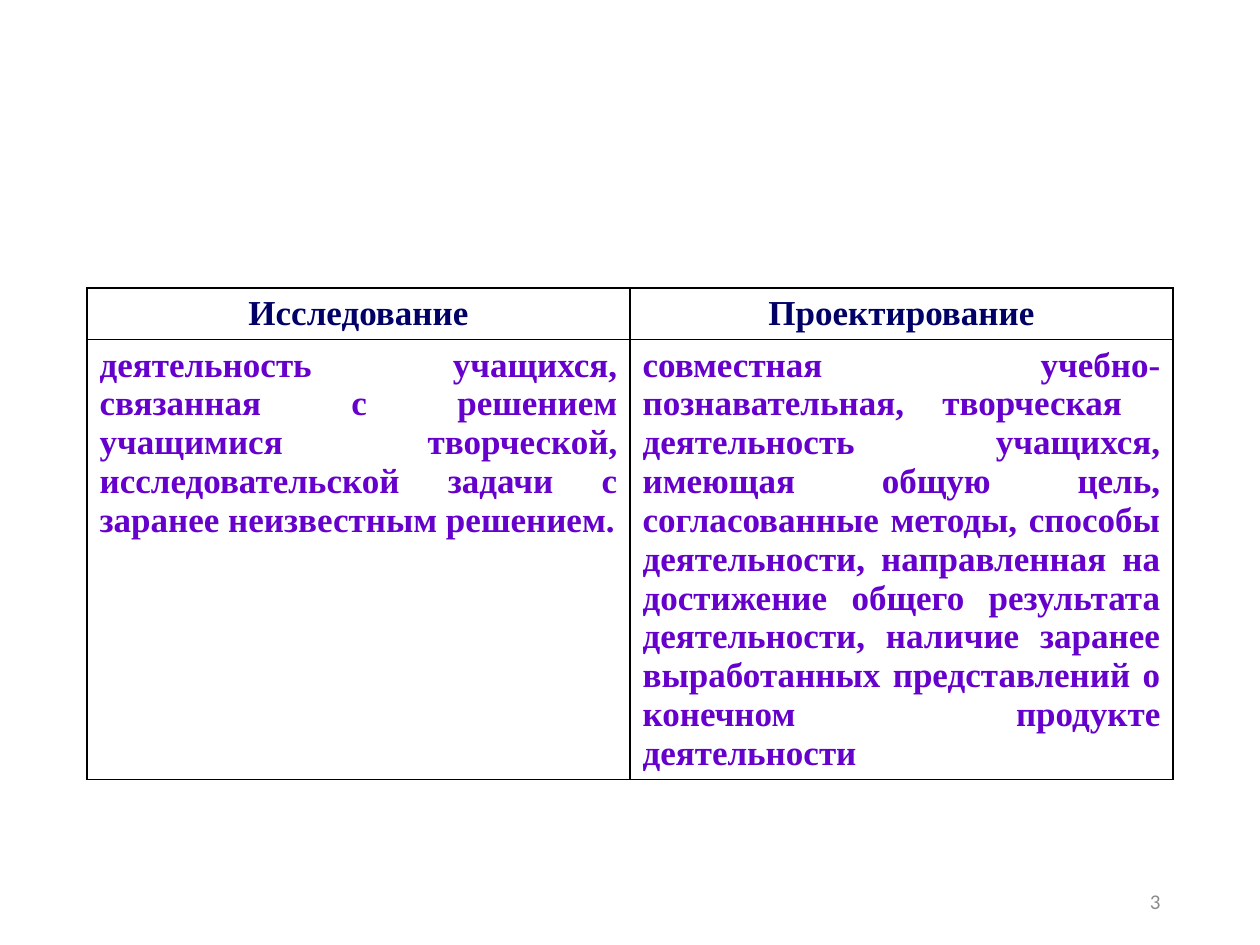
import pptx
import pptx.util
import pptx.dml.color
import pptx.enum.text
import pptx.oxml
import pptx.oxml.ns

ALIGN = pptx.enum.text.PP_ALIGN
ANCHOR = pptx.enum.text.MSO_ANCHOR

HEADINGS = ["Исследование", "Проектирование"]
DEFINITIONS = [
    "деятельность учащихся, связанная с решением учащимися творческой, "
    "исследовательской задачи с заранее неизвестным решением.",
    "совместная учебно-познавательная, творческая  деятельность учащихся, "
    "имеющая общую цель, согласованные методы, способы деятельности, "
    "направленная на достижение общего результата деятельности, наличие заранее "
    "выработанных представлений о конечном продукте деятельности",
]
ROWS = [
    {"texts": HEADINGS, "height": 51, "color": "000066", "align": ALIGN.CENTER},
    {"texts": DEFINITIONS, "height": 440, "color": "6600CC", "align": ALIGN.JUSTIFY},
]
SLIDE_NUMBER = "3"
TABLE_LEFT, TABLE_TOP, COLUMN_WIDTH = 87, 288, 543
NUMBER_BOX = (890, 876, 283, 50)
BORDER_COLOR = "000000"


def px(value):
    return pptx.util.Emu(round(value * 914400 / 126))


def rgb(value):
    return pptx.dml.color.RGBColor.from_string(value)


def write(text_frame, text, size, font, color, align, bold=False):
    paragraph = text_frame.paragraphs[0]
    paragraph.alignment = align
    run = paragraph.add_run()
    run.text = text
    run.font.size = pptx.util.Pt(size)
    run.font.name = font
    run.font.bold = bold
    run.font.color.rgb = rgb(color)


def add_borders(cell):
    properties = cell._tc.get_or_add_tcPr()
    for position, side in enumerate(("lnL", "lnR", "lnT", "lnB")):
        border = pptx.oxml.parse_xml(
            f'<a:{side} {pptx.oxml.ns.nsdecls("a")} w="12700"><a:solidFill>'
            f'<a:srgbClr val="{BORDER_COLOR}"/></a:solidFill></a:{side}>'
        )
        properties.insert(position, border)


def add_comparison(slide):
    height = sum(row["height"] for row in ROWS)
    table = slide.shapes.add_table(
        len(ROWS), len(HEADINGS), px(TABLE_LEFT), px(TABLE_TOP),
        px(COLUMN_WIDTH * len(HEADINGS)), px(height),
    ).table
    table.first_row = False
    table.horz_banding = False
    for column in table.columns:
        column.width = px(COLUMN_WIDTH)
    for row_index, row in enumerate(ROWS):
        table.rows[row_index].height = px(row["height"])
        for column_index, text in enumerate(row["texts"]):
            cell = table.cell(row_index, column_index)
            cell.fill.background()
            add_borders(cell)
            write(cell.text_frame, text, size=20, font="Times New Roman",
                  color=row["color"], align=row["align"], bold=True)


def add_slide_number(slide):
    text_frame = slide.shapes.add_textbox(*map(px, NUMBER_BOX)).text_frame
    text_frame.word_wrap = True
    text_frame.vertical_anchor = ANCHOR.MIDDLE
    write(text_frame, SLIDE_NUMBER, size=12, font="Calibri", color="8C8C8C", align=ALIGN.RIGHT)


def main():
    presentation = pptx.Presentation()
    presentation.slide_width = px(1260)
    presentation.slide_height = px(945)
    slide = presentation.slides.add_slide(presentation.slide_layouts[6])
    add_comparison(slide)
    add_slide_number(slide)
    presentation.save("out.pptx")


if __name__ == "__main__":
    main()
